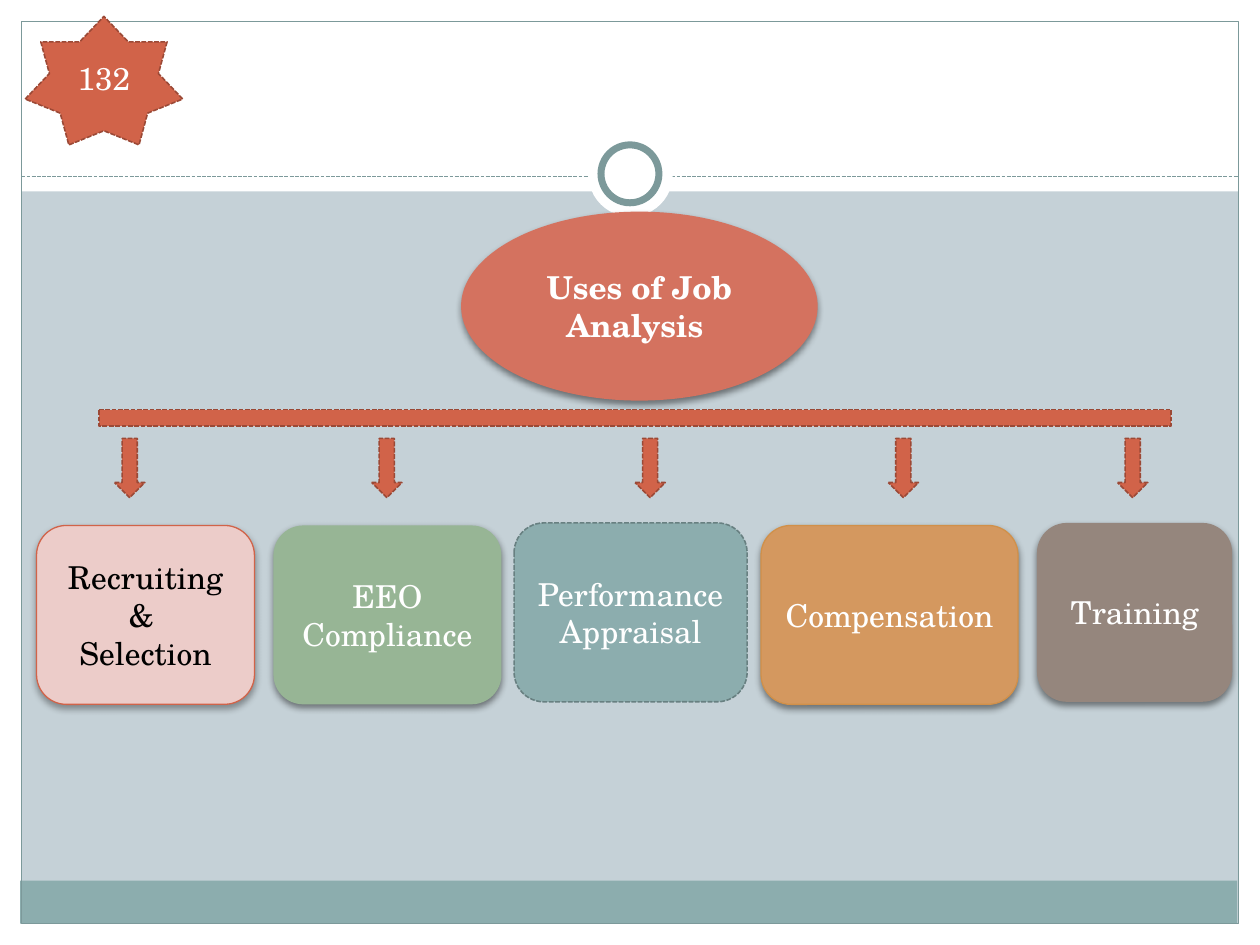
from dataclasses import dataclass

from lxml import etree
from pptx import Presentation
from pptx.dml.color import RGBColor
from pptx.enum.dml import MSO_LINE
from pptx.enum.shapes import MSO_CONNECTOR, MSO_SHAPE
from pptx.enum.text import MSO_ANCHOR, PP_ALIGN
from pptx.oxml.ns import qn
from pptx.util import Inches, Pt

RECTANGLE = MSO_SHAPE.RECTANGLE
ELLIPSE = MSO_SHAPE.OVAL
ROUNDED = MSO_SHAPE.ROUNDED_RECTANGLE
MINUS = MSO_SHAPE.MATH_MINUS
DOWN_ARROW = MSO_SHAPE.DOWN_ARROW
STAR = MSO_SHAPE.STAR_7_POINT
STRAIGHT = MSO_CONNECTOR.STRAIGHT
DASH = MSO_LINE.SQUARE_DOT  # written to the file as sysDash
CENTER = PP_ALIGN.CENTER
MIDDLE = MSO_ANCHOR.MIDDLE

FONT = "TeX Gyre Schola"
COLORS = {
    "background": "C5D1D7",
    "white": "FFFFFF",
    "black": "000000",
    "teal": "8CADAE",
    "frame": "7C999A",
    "teal_edge": "688081",
    "red": "D16349",
    "red_edge": "9B4936",
    "coral": "D4725F",
    "pink": "ECCCC9",
    "green": "97B595",
    "orange": "D4985F",
    "orange_edge": "D19049",
    "brown": "95867D",
}


@dataclass
class Block:
    kind: int
    left: float
    top: float
    width: float
    height: float
    fill: str | None = None
    line: str | None = None
    line_width: float = 0.75
    dashed: bool = False
    shadow: int = 0  # opacity in percent
    text: str = ""
    text_color: str = "white"
    bold: bool = False


def color(name: str) -> RGBColor:
    return RGBColor.from_string(COLORS[name])


def add_shadow(shape, opacity: int) -> None:
    """Put a soft shadow straight below the shape."""
    effects = shape._element.spPr.find(qn("a:effectLst"))
    shadow = etree.SubElement(
        effects, qn("a:outerShdw"), blurRad=str(Pt(4)), dist=str(Pt(2)),
        dir="5400000", rotWithShape="0")
    shade = etree.SubElement(shadow, qn("a:srgbClr"), val=COLORS["black"])
    etree.SubElement(shade, qn("a:alpha"), val=str(opacity * 1000))


def write_text(shape, block: Block) -> None:
    text_frame = shape.text_frame
    text_frame.word_wrap = True
    text_frame.vertical_anchor = MIDDLE
    text_frame.text = block.text
    for paragraph in text_frame.paragraphs:
        paragraph.alignment = CENTER
        for run in paragraph.runs:
            run.font.name = FONT
            run.font.size = Pt(18)
            run.font.bold = block.bold
            run.font.color.rgb = color(block.text_color)


def draw_block(slide, block: Block) -> None:
    shape = slide.shapes.add_shape(
        block.kind, Inches(block.left), Inches(block.top),
        Inches(block.width), Inches(block.height))
    shape.shadow.inherit = False
    if block.fill:
        shape.fill.solid()
        shape.fill.fore_color.rgb = color(block.fill)
    else:
        shape.fill.background()
    if block.line:
        shape.line.color.rgb = color(block.line)
        shape.line.width = Pt(block.line_width)
        if block.dashed:
            shape.line.dash_style = DASH
    else:
        shape.line.fill.background()
    if block.shadow:
        add_shadow(shape, block.shadow)
    if block.text:
        write_text(shape, block)


def draw_divider(slide, left: float, right: float, y: float) -> None:
    divider = slide.shapes.add_connector(
        STRAIGHT, Inches(left), Inches(y), Inches(right), Inches(y))
    divider.line.color.rgb = color("frame")
    divider.line.width = Pt(0.75)
    divider.line.dash_style = DASH
    etree.SubElement(divider._element.spPr, qn("a:effectLst"))


def red_block(kind: int, left: float, top: float, width: float,
              height: float, text: str = "") -> Block:
    return Block(kind, left, top, width, height, "red", "red_edge", 0.9,
                 dashed=True, text=text)


def use_box(left: float, top: float, width: float, text: str, fill: str,
            **style) -> Block:
    return Block(ROUNDED, left, top, width, 1.42, fill, text=text, **style)


FRAME = [
    Block(RECTANGLE, 0, 7.33, 10, 0.17, "white"),
    Block(RECTANGLE, 0, 0, 10, 1.52, "white"),
    Block(RECTANGLE, 0, 0, 0.17, 7.5, "white"),
    Block(RECTANGLE, 9.83, 0, 0.17, 7.5, "white"),
    Block(RECTANGLE, 0.16, 6.99, 9.66, 0.34, "teal"),
    Block(RECTANGLE, 0.17, 0.17, 9.66, 7.16, line="frame"),
]
RING = [
    Block(ELLIPSE, 4.67, 1.05, 0.67, 0.67, "white"),
    Block(ELLIPSE, 4.77, 1.15, 0.46, 0.46, "white", "frame", 4),
]
TOPIC = Block(ELLIPSE, 3.66, 1.68, 2.83, 1.5, "coral", shadow=45,
              text="Uses of Job Analysis ", bold=True)
BAR = red_block(MINUS, -0.75, 3.04, 11.58, 0.55)
ARROWS = [red_block(DOWN_ARROW, left, 3.48, 0.24, 0.47)
          for left in (0.91, 2.95, 5.04, 7.05, 8.87)]
USES = [
    use_box(0.29, 4.17, 1.73, "Recruiting & \nSelection", "pink",
            line="red", shadow=35, text_color="black"),
    use_box(2.17, 4.17, 1.81, "EEO Compliance", "green", shadow=45),
    use_box(4.08, 4.15, 1.85, "Performance \nAppraisal", "teal",
            line="teal_edge", line_width=0.9, dashed=True),
    use_box(6.04, 4.17, 2.04, "Compensation", "orange",
            line="orange_edge", shadow=45),
    use_box(8.23, 4.15, 1.55, "Training", "brown", shadow=45),
]
NUMBER = red_block(STAR, 0.2, 0.13, 1.25, 1.02, "132")


def main() -> None:
    presentation = Presentation()
    presentation.slide_width = Inches(10)
    presentation.slide_height = Inches(7.5)
    slide = presentation.slides.add_slide(presentation.slide_layouts[6])
    slide.background.fill.solid()
    slide.background.fill.fore_color.rgb = color("background")

    for block in FRAME:
        draw_block(slide, block)
    draw_divider(slide, 0.17, 9.83, 1.4)
    for block in [*RING, TOPIC, BAR, *ARROWS, *USES, NUMBER]:
        draw_block(slide, block)
    presentation.save("out.pptx")


if __name__ == "__main__":
    main()
